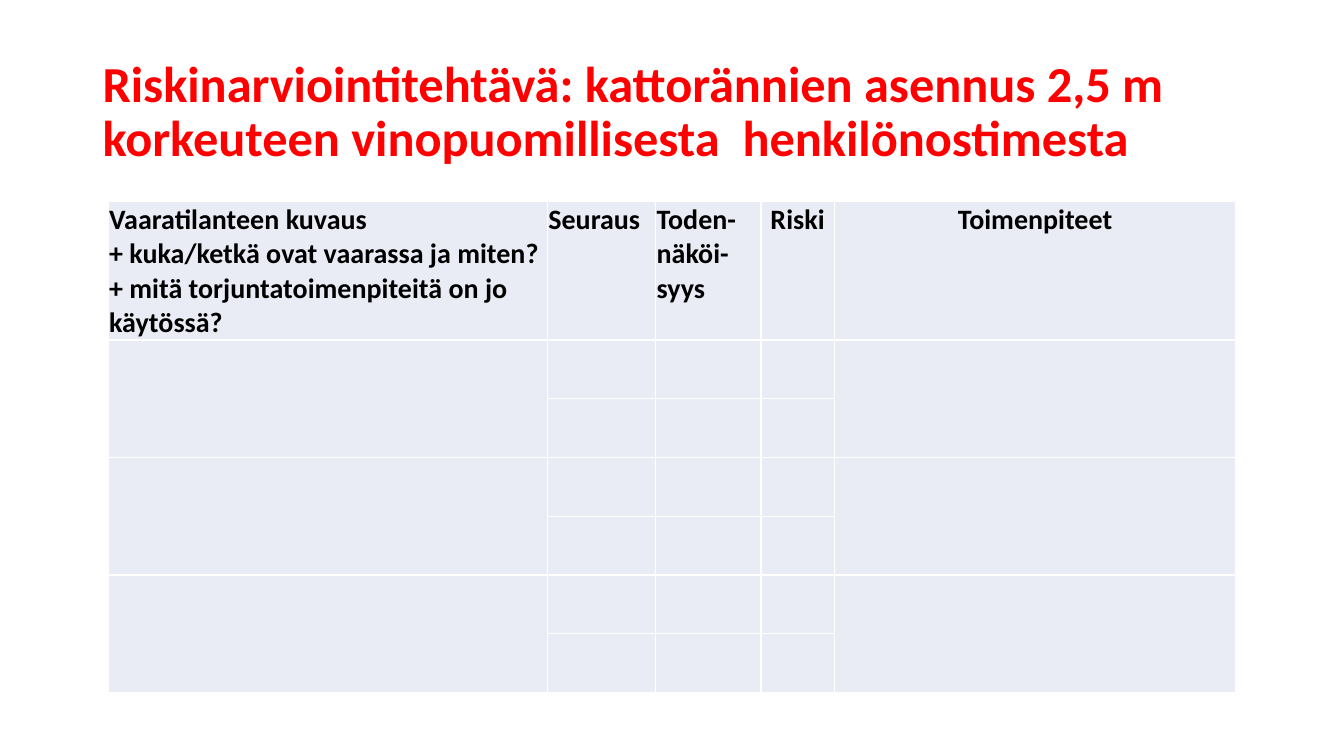
from lxml import etree
from pptx import Presentation
from pptx.dml.color import RGBColor
from pptx.enum.text import MSO_ANCHOR, PP_ALIGN
from pptx.oxml.ns import qn
from pptx.util import Cm, Pt

LEFT, CENTER = PP_ALIGN.LEFT, PP_ALIGN.CENTER
MIDDLE = MSO_ANCHOR.MIDDLE

TITLE = "Riskinarviointitehtävä: kattorännien asennus 2,5 m korkeuteen vinopuomillisesta  henkilönostimesta"
# heading, column width in cm, alignment
COLUMNS = [
    ("Vaaratilanteen kuvaus\v+ kuka/ketkä ovat vaarassa ja miten?\v"
     "+ mitä torjuntatoimenpiteitä on jo käytössä?", 11.07, LEFT),
    ("Seuraus", 2.73, LEFT),
    ("Toden-näköi-syys", 2.66, LEFT),
    ("Riski", 1.84, CENTER),
    ("Toimenpiteet", 10.13, CENTER),
]
HAZARDS, ROWS_PER_HAZARD = 3, 2
MERGED_COLUMNS = (0, len(COLUMNS) - 1)
HEADER_HEIGHT, ROW_HEIGHT = 3.47, 1.48
RED, BLACK, WHITE, PALE_BLUE = "FF0000", "000000", "FFFFFF", "E9EBF5"

TITLE_BOX = {"left": Cm(2.33), "top": Cm(1.01), "width": Cm(29.21), "height": Cm(3.68)}
CELL_MARGINS = {"margin_left": Cm(0.03), "margin_top": Cm(0.03),
                "margin_right": Cm(0.03), "margin_bottom": 0}


def color(value):
    return RGBColor.from_string(value)


def apply(target, values):
    for name, value in values.items():
        setattr(target, name, value)


def style_text(paragraph, size, text_color, alignment):
    paragraph.alignment = alignment
    for run in paragraph.runs:
        apply(run.font, {"name": "Calibri", "size": Pt(size), "bold": True})
        run.font.color.rgb = color(text_color)


def add_borders(cell):
    properties = cell._tc.get_or_add_tcPr()
    for side in ("a:lnL", "a:lnR", "a:lnT", "a:lnB"):
        line = etree.SubElement(properties, qn(side), w=str(Pt(1)))
        fill = etree.SubElement(line, qn("a:solidFill"))
        etree.SubElement(fill, qn("a:srgbClr"), val=WHITE)


def add_title(slide):
    title = slide.shapes.title
    apply(title, TITLE_BOX)
    frame = title.text_frame
    frame.text = TITLE
    apply(frame, {"vertical_anchor": MIDDLE, "word_wrap": True})
    frame.paragraphs[0].line_spacing = 0.9
    style_text(frame.paragraphs[0], 36, RED, LEFT)


def add_risk_table(slide):
    heights = [HEADER_HEIGHT] + [ROW_HEIGHT] * (HAZARDS * ROWS_PER_HAZARD)
    width = sum(column[1] for column in COLUMNS)
    table = slide.shapes.add_table(len(heights), len(COLUMNS), Cm(2.72), Cm(5.08),
                                   Cm(width), Cm(sum(heights))).table
    for row, height in zip(table.rows, heights):
        row.height = Cm(height)
    for cell in table.iter_cells():
        add_borders(cell)
        cell.fill.solid()
        cell.fill.fore_color.rgb = color(PALE_BLUE)
    for index, (heading, column_width, alignment) in enumerate(COLUMNS):
        table.columns[index].width = Cm(column_width)
        cell = table.cell(0, index)
        apply(cell, CELL_MARGINS)
        cell.text = heading
        style_text(cell.text_frame.paragraphs[0], 20, BLACK, alignment)
    for first_row in range(1, len(heights), ROWS_PER_HAZARD):
        for index in MERGED_COLUMNS:
            last_cell = table.cell(first_row + ROWS_PER_HAZARD - 1, index)
            table.cell(first_row, index).merge(last_cell)


def main():
    deck = Presentation()
    apply(deck, {"slide_width": Cm(33.87), "slide_height": Cm(19.05)})
    slide = deck.slides.add_slide(deck.slide_layouts.get_by_name("Title Only"))
    add_title(slide)
    add_risk_table(slide)
    deck.save("out.pptx")


if __name__ == "__main__":
    main()
